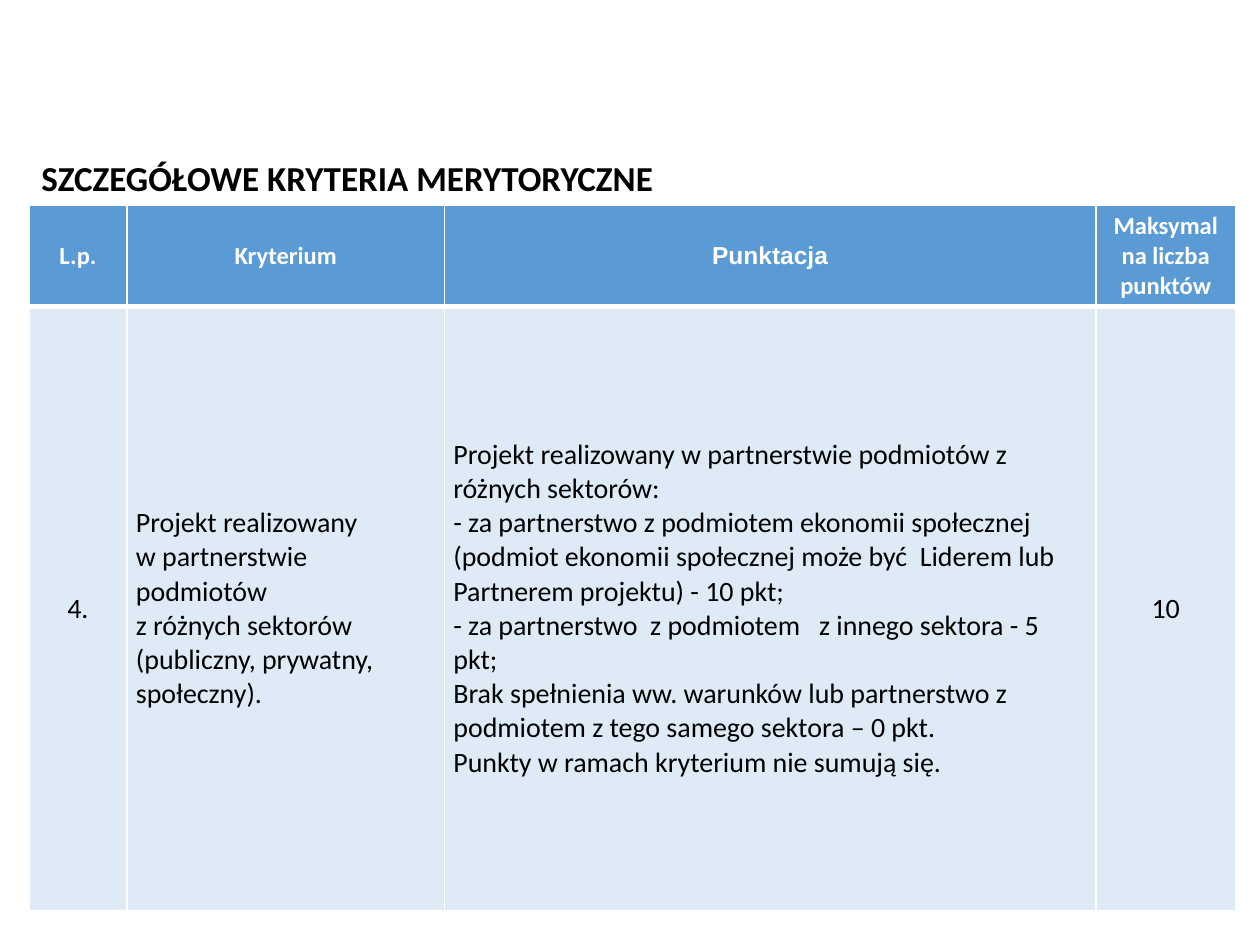
from dataclasses import dataclass

from lxml import etree
from pptx import Presentation
from pptx.dml.color import RGBColor
from pptx.enum import text
from pptx.oxml import ns
from pptx.util import Cm, Pt


@dataclass(frozen=True)
class Theme:
    header: str = "5B9BD5"
    body: str = "DEEBF7"
    light: str = "FFFFFF"
    dark: str = "000000"
    font: str = "Calibri"
    alt_font: str = "Arial"
    title_size: int = 20
    header_size: int = 14
    body_size: int = 16
    thin: int = 1
    thick: int = 3


@dataclass(frozen=True)
class RowStyle:
    fill: str
    color: str
    size: int
    bold: bool
    top: int
    bottom: int


@dataclass(frozen=True)
class CellText:
    paragraphs: tuple[str, ...]
    font: str
    centered: bool = True
    spacing: int = 0


THEME = Theme()
HEADER = RowStyle(THEME.header, THEME.light, THEME.header_size, True, THEME.thin, THEME.thick)
BODY = RowStyle(THEME.body, THEME.dark, THEME.body_size, False, THEME.thick, THEME.thin)
LEFT, TABLE_TOP = 0.58, 4.14
COLUMNS = (1.98, 6.4, 13.13, 2.82)
ROW_HEIGHTS = (2.03, 12.19)

ROWS = (
    (HEADER, (
        CellText(("L.p.",), THEME.font),
        CellText(("Kryterium",), THEME.font),
        CellText(("Punktacja",), THEME.alt_font),
        CellText(("Maksymalna liczba punktów",), THEME.font),
    )),
    (BODY, (
        CellText(("4.",), THEME.font),
        CellText((
            "Projekt realizowany \vw partnerstwie podmiotów \v"
            "z różnych sektorów (publiczny, prywatny, społeczny).",
        ), THEME.font, centered=False, spacing=4),
        CellText((
            "Projekt realizowany w partnerstwie podmiotów z różnych sektorów:",
            "- za partnerstwo z podmiotem ekonomii społecznej  (podmiot ekonomii "
            "społecznej może być  Liderem lub Partnerem projektu) - 10 pkt;",
            "- za partnerstwo  z podmiotem   z innego sektora - 5 pkt;",
            "Brak spełnienia ww. warunków lub partnerstwo z podmiotem z tego "
            "samego sektora – 0 pkt.",
            "Punkty w ramach kryterium nie sumują się.",
        ), THEME.font, centered=False),
        CellText(("10",), THEME.font),
    )),
)


def format_runs(p, font: str, size: int, color: str, bold: bool) -> None:
    for r in p.runs:
        r.font.name = font
        r.font.size = Pt(size)
        r.font.bold = bold
        r.font.color.rgb = RGBColor.from_string(color)


def set_borders(cell, style: RowStyle) -> None:
    tc_pr = cell._tc.get_or_add_tcPr()
    widths = {"lnL": THEME.thin, "lnR": THEME.thin, "lnT": style.top, "lnB": style.bottom}
    for i, (tag, width) in enumerate(widths.items()):
        ln = etree.Element(ns.qn(f"a:{tag}"), w=str(Pt(width)))
        fill = etree.SubElement(ln, ns.qn("a:solidFill"))
        etree.SubElement(fill, ns.qn("a:srgbClr"), val=THEME.light)
        tc_pr.insert(i, ln)


def fill_cell(cell, content: CellText, style: RowStyle) -> None:
    cell.fill.solid()
    cell.fill.fore_color.rgb = RGBColor.from_string(style.fill)
    set_borders(cell, style)
    cell.vertical_anchor = text.MSO_ANCHOR.MIDDLE
    if not content.centered:
        cell.margin_left = cell.margin_right = Cm(0.18)
        cell.margin_top = cell.margin_bottom = Cm(0)
    tf = cell.text_frame
    for i, line in enumerate(content.paragraphs):
        p = tf.add_paragraph() if i else tf.paragraphs[0]
        p.text = line
        p.alignment = text.PP_ALIGN.CENTER if content.centered else text.PP_ALIGN.LEFT
        if content.spacing:
            p.space_after = Pt(content.spacing)
        format_runs(p, content.font, style.size, style.color, style.bold)


def add_title(slide, wording: str) -> None:
    sp = slide.shapes.title
    sp.left, sp.top, sp.width, sp.height = Cm(LEFT), Cm(3.02), Cm(23.75), Cm(1.11)
    tf = sp.text_frame
    tf.text = wording
    tf.word_wrap = True
    tf.auto_size = text.MSO_AUTO_SIZE.SHAPE_TO_FIT_TEXT
    tf.vertical_anchor = text.MSO_ANCHOR.MIDDLE
    p = tf.paragraphs[0]
    p.alignment = text.PP_ALIGN.LEFT
    format_runs(p, THEME.font, THEME.title_size, THEME.dark, True)


def add_criteria_table(slide) -> None:
    table = slide.shapes.add_table(
        len(ROWS), len(COLUMNS), Cm(LEFT), Cm(TABLE_TOP),
        Cm(sum(COLUMNS)), Cm(sum(ROW_HEIGHTS)),
    ).table
    for column, width in zip(table.columns, COLUMNS):
        column.width = Cm(width)
    for row, height, (style, contents) in zip(table.rows, ROW_HEIGHTS, ROWS):
        row.height = Cm(height)
        for cell, content in zip(row.cells, contents):
            fill_cell(cell, content, style)


def main() -> None:
    prs = Presentation()
    prs.slide_width, prs.slide_height = Cm(25.4), Cm(19.05)
    slide = prs.slides.add_slide(prs.slide_layouts.get_by_name("Title Only"))
    add_title(slide, "SZCZEGÓŁOWE KRYTERIA MERYTORYCZNE")
    add_criteria_table(slide)
    prs.save("out.pptx")


if __name__ == "__main__":
    main()
